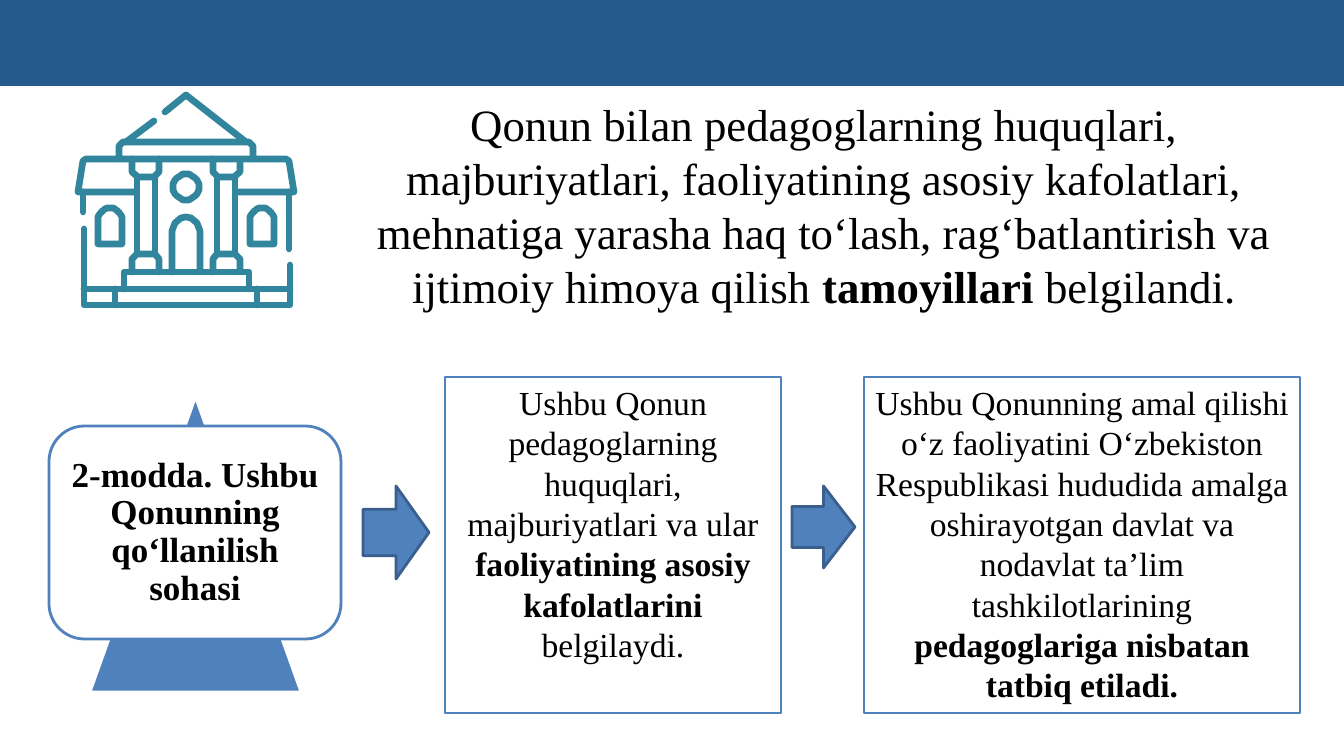
from math import cos, pi, sin

from pptx import Presentation
from pptx.dml.color import RGBColor
from pptx.enum.shapes import MSO_SHAPE as Shape
from pptx.enum.text import MSO_ANCHOR as Anchor, MSO_AUTO_SIZE as AutoSize, PP_ALIGN as Align
from pptx.util import Emu, Pt
from lxml.etree import SubElement
from pptx.oxml.ns import qn

PX = 914400 / 100.8
FONT = "Times New Roman"
BLACK, WHITE, BLUE, NAVY, EDGE, TEAL = "000000", "FFFFFF", "4F81BD", "245A8C", "3A5F8C", "31859C"

# Runs of text: (words, bold)
SUMMARY = [
    ("Qonun bilan pedagoglarning huquqlari, majburiyatlari, faoliyatining asosiy kafolatlari, "
     "mehnatiga yarasha haq to‘lash, rag‘batlantirish va ijtimoiy himoya qilish ", False),
    ("tamoyillari ", True),
    ("belgilandi.", False),
]
ARTICLE = [("2-modda. Ushbu Qonunning qo‘llanilish sohasi", True)]
PURPOSE = [
    ("Ushbu Qonun pedagoglarning huquqlari, majburiyatlari va ular ", False),
    ("faoliyatining asosiy kafolatlarini ", True),
    ("belgilaydi.", False),
]
SCOPE = [
    ("Ushbu Qonunning amal qilishi o‘z faoliyatini O‘zbekiston Respublikasi hududida amalga "
     "oshirayotgan davlat va nodavlat ta’lim tashkilotlarining ", False),
    ("pedagoglariga nisbatan tatbiq etiladi.", True),
]

# Preset, (left, top, width, height) in px, fill, line, runs, text format
PARTS = [
    (Shape.RECTANGLE, (0, -1, 1344, 87), NAVY, None, [], {}),
    (Shape.ISOSCELES_TRIANGLE, (90, 397, 211, 295), BLUE, WHITE, [], {}),
    (Shape.ROUNDED_RECTANGLE, (49, 426, 292, 213), WHITE, BLUE, ARTICLE,
     {"size": 25, "anchor": Anchor.MIDDLE, "spacing": 0.9}),
    (Shape.RECTANGLE, (445, 377, 336, 336), WHITE, BLUE, PURPOSE, {"size": 24}),
    (Shape.RECTANGLE, (864, 377, 436, 336), WHITE, BLUE, SCOPE, {"size": 24}),
    (Shape.RIGHT_ARROW, (363, 486, 66, 93), BLUE, EDGE, [], {}),
    (Shape.RIGHT_ARROW, (792, 486, 63, 82), BLUE, EDGE, [], {}),
]
SUMMARY_BOX = (349, 92, 950, 228)


def arc(x, y, radius, start, end, steps=24):
    angles = [start + (end - start) * step / steps for step in range(steps + 1)]
    return [(x + radius * cos(a), y - radius * sin(a)) for a in angles]


# Strokes of the building, in px
MIDDLE = 186
LEFT_HALF = [
    [(119, 159), (86, 159), (83, 161), (78, 192), (134, 192)],  # wing
    [(132, 159), (132, 172), (138, 177), (154, 177), (159, 172), (159, 159)],  # capital
    [(137, 177), (137, 254)],
    [(155, 177), (155, 254)],
    [(132, 272), (132, 259), (137, 254), (155, 254), (159, 259), (159, 272)],  # column foot
    [(98, 244), *reversed(arc(110, 220, 12, 0, pi)), (122, 244), (98, 244)],  # window
    [(115, 289), (115, 305)],
]
UNPAIRED = [
    [(154, 121), (126, 142)],
    [(165, 112), (186, 95), (246, 142)],
    [(123, 142), (249, 142), (253, 146), (253, 159), (119, 159), (119, 146), (123, 142)],
    arc(186, 187, 13, 0, 2 * pi),
    [(172, 272), (172, 231), (175, 223), (181, 218), (186, 217), (191, 218), (197, 223),
     (200, 231), (200, 272)],  # door
    [(124, 289), (124, 272), (249, 272), (249, 289)],
    [(83, 192), (83, 212)],
    [(289, 192), (289, 249)],
    [(84, 229), (84, 305), (290, 305), (290, 265)],
    [(84, 289), (290, 289)],
]


def color(value):
    return RGBColor.from_string(value)


def emu(box):
    return [Emu(round(length * PX)) for length in box]


def write(frame, runs, size, anchor=Anchor.TOP, spacing=None):
    for name, value in {"word_wrap": True, "vertical_anchor": anchor,
                        "auto_size": AutoSize.NONE}.items():
        setattr(frame, name, value)
    paragraph = frame.paragraphs[0]
    paragraph.alignment = Align.CENTER
    if spacing:
        paragraph.line_spacing = spacing
    for words, bold in runs:
        run = paragraph.add_run()
        run.text = words
        for name, value in {"name": FONT, "size": Pt(size), "bold": bold}.items():
            setattr(run.font, name, value)
        run.font.color.rgb = color(BLACK)


def style(shape, fill, line, width=2):
    shape.shadow.inherit = False
    for part, value in ((shape.fill, fill), (shape.line.fill, line)):
        if value:
            part.solid()
            part.fore_color.rgb = color(value)
        else:
            part.background()
    if line:
        shape.line.width = Pt(width)


def draw_building(shapes):
    mirrored = [[(2 * MIDDLE - x, y) for x, y in stroke] for stroke in LEFT_HALF]
    first, *others = LEFT_HALF + mirrored + UNPAIRED
    outline = shapes.build_freeform(*first[0], scale=PX)
    outline.add_line_segments(first[1:], close=False)
    for stroke in others:
        outline.move_to(*stroke[0])
        outline.add_line_segments(stroke[1:], close=False)
    building = outline.convert_to_shape()
    style(building, None, TEAL, 4.75)
    stroke_format = building.line._get_or_add_ln()
    stroke_format.set("cap", "rnd")
    SubElement(stroke_format, qn("a:round"))


def main():
    deck = Presentation()
    deck.slide_width, deck.slide_height = emu((1344, 756))
    shapes = deck.slides.add_slide(deck.slide_layouts[6]).shapes
    draw_building(shapes)
    for preset, box, fill, line, runs, text_format in PARTS:
        shape = shapes.add_shape(preset, *emu(box))
        style(shape, fill, line)
        if runs:
            write(shape.text_frame, runs, **text_format)
    write(shapes.add_textbox(*emu(SUMMARY_BOX)).text_frame, SUMMARY, size=32)
    deck.save("out.pptx")


if __name__ == "__main__":
    main()
